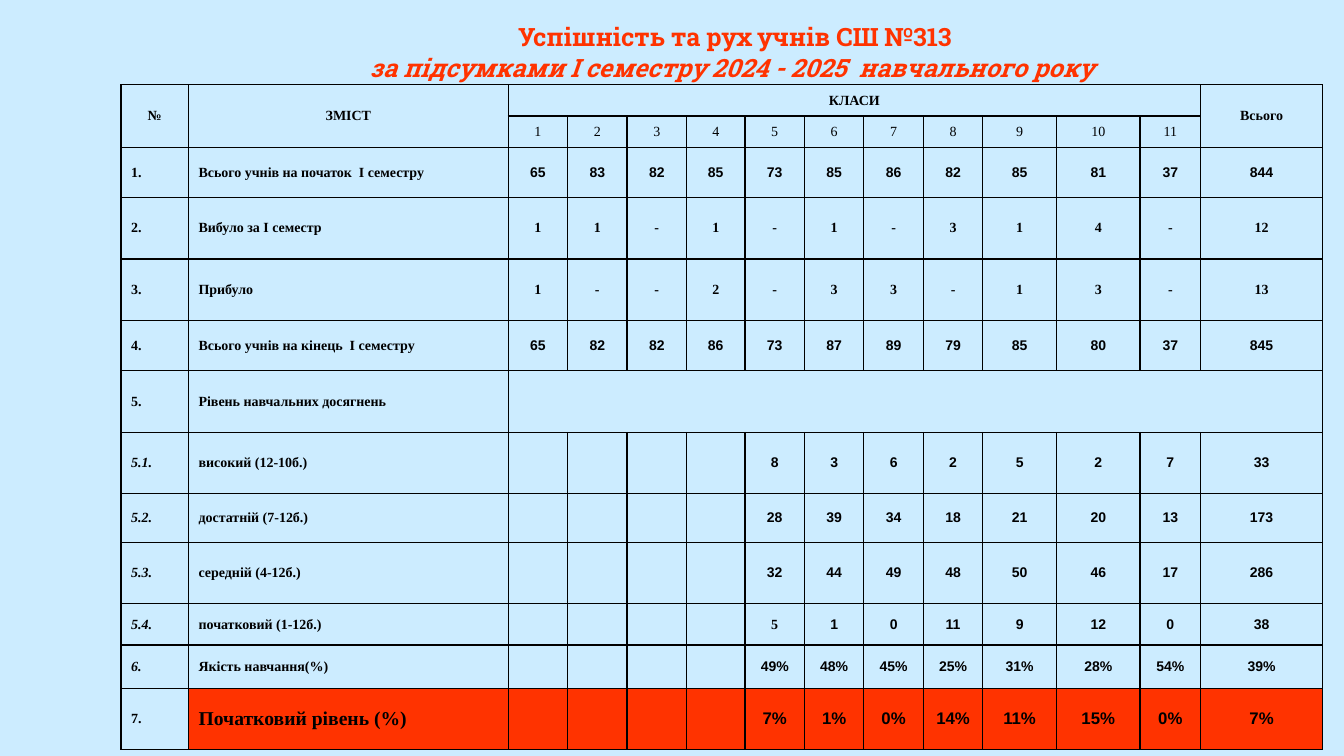
import pptx
import pptx.dml.color
import pptx.enum.text
import pptx.oxml
import pptx.oxml.ns
import pptx.util
from dataclasses import dataclass

ALIGN = pptx.enum.text.PP_ALIGN
MIDDLE = pptx.enum.text.MSO_ANCHOR.MIDDLE


@dataclass(frozen=True)
class Theme:
    background: str = "CCECFF"
    accent: str = "FF3300"
    ink: str = "000000"
    title_font: str = "Roboto Slab"
    label_font: str = "Times New Roman"
    number_font: str = "Arial"
    title_size: int = 18
    body_size: int = 10
    alert_label_size: int = 14
    alert_number_size: int = 12
    border_width: int = 1


THEME = Theme()
SLIDE_SIZE = (13.33, 7.5)
TITLE_AREA = (3.17, 0.16, 8.18, 1.01)
TABLE_CORNER = (1.2, 0.84)
COLUMN_WIDTHS = [0.67, 3.17] + [0.59] * 3 + [0.58] + [0.59] * 4 + [0.73, 0.83, 0.6, 1.21]
ROW_HEIGHTS = [0.31, 0.31, 0.5, 0.61, 0.61, 0.5, 0.61, 0.61, 0.48, 0.61, 0.41, 0.43, 0.61]
HEADER_ROWS = 2
FIRST_CLASS, TOTAL = 2, 13
LEVELS_ROW, BEGINNER_ROW, ALERT_ROW = 6, 10, 12
ITALIC_ROWS = range(7, 12)
SERIF_ROWS = (1, 3, 4)

# Number, label and the values, which end at the total column
RECORDS = [
    ("1.", "Всього учнів на початок  І семестру", "65 83 82 85 73 85 86 82 85 81 37 844"),
    ("2.", "Вибуло за І семестр", "1 1 - 1 - 1 - 3 1 4 - 12"),
    ("3.", "Прибуло", "1 - - 2 - 3 3 - 1 3 - 13"),
    ("4.", "Всього учнів на кінець  І семестру", "65 82 82 86 73 87 89 79 85 80 37 845"),
    ("5.", "Рівень навчальних досягнень", ""),
    ("5.1.", "високий (12-10б.)", "8 3 6 2 5 2 7 33"),
    ("5.2.", "достатній (7-12б.)", "28 39 34 18 21 20 13 173"),
    ("5.3.", "середній (4-12б.)", "32 44 49 48 50 46 17 286"),
    ("5.4.", "початковий (1-12б.)", "5 1 0 11 9 12 0 38"),
    ("6.", "Якість навчання(%)", "49% 48% 45% 25% 31% 28% 54% 39%"),
    ("7.", "Початковий рівень (%)", "7% 1% 0% 14% 11% 15% 0% 7%"),
]


def inches(*lengths):
    return [pptx.util.Inches(length) for length in lengths]


def rgb(code):
    return pptx.dml.color.RGBColor.from_string(code)


def write(para, text, *, font=THEME.label_font, size=THEME.body_size, color=THEME.ink,
          bold=True, italic=False, align=ALIGN.CENTER):
    para.alignment = align
    if not text:
        para._p.get_or_add_endParaRPr().set("sz", str(size * 100))
        return
    span = para.add_run()
    span.text = text
    span.font.name, span.font.size = font, pptx.util.Pt(size)
    span.font.bold, span.font.italic = bold, italic
    span.font.color.rgb = rgb(color)


def add_title(page):
    box = page.shapes.add_textbox(*inches(*TITLE_AREA))
    frame = box.text_frame
    frame.word_wrap = False
    frame.vertical_anchor = MIDDLE
    lines = [(" Успішність та рух учнів СШ №313", False),
             ("за підсумками І семестру 2024 - 2025  навчального року", True),
             ("", False)]
    for index, (text, italic) in enumerate(lines):
        para = frame.add_paragraph() if index else frame.paragraphs[0]
        write(para, text, font=THEME.title_font, size=THEME.title_size,
              color=THEME.accent, italic=italic)


def style_cell(cell, fill):
    cell.vertical_anchor = MIDDLE
    properties = cell._tc.get_or_add_tcPr()
    width = pptx.util.Pt(THEME.border_width)
    for side in ("lnL", "lnR", "lnT", "lnB"):
        properties.append(pptx.oxml.parse_xml(
            f'<a:{side} {pptx.oxml.ns.nsdecls("a")} w="{width}"><a:solidFill>'
            f'<a:srgbClr val="{THEME.ink}"/></a:solidFill></a:{side}>'))
    if fill:
        cell.fill.solid()
        cell.fill.fore_color.rgb = rgb(fill)
    else:
        cell.fill.background()


def table_rows():
    """Return every row as a full list of cell texts."""
    classes = [str(number) for number in range(1, 12)]
    rows = [["№", "ЗМІСТ", "КЛАСИ"] + [""] * 10 + ["Всього"], ["", ""] + classes + [""]]
    for number, label, numbers in RECORDS:
        values = numbers.split()
        gap = [""] * (TOTAL + 1 - FIRST_CLASS - len(values))
        rows.append([number, label] + gap + values)
    return rows


def cell_format(row, column):
    """Return the text format that belongs to a place in the table."""
    if row < HEADER_ROWS:
        return {"bold": row == 0}
    alert = row == ALERT_ROW
    if column < FIRST_CLASS:
        size = THEME.alert_label_size if alert and column == 1 else THEME.body_size
        return {"align": ALIGN.LEFT, "size": size,
                "italic": column == 0 and row in ITALIC_ROWS}
    serif = row in SERIF_ROWS or (row, column) == (BEGINNER_ROW, 6)
    return {"font": THEME.label_font if serif else THEME.number_font,
            "size": THEME.alert_number_size if alert else THEME.body_size}


def add_results_table(page):
    rows = table_rows()
    frame = page.shapes.add_table(
        len(ROW_HEIGHTS), len(COLUMN_WIDTHS),
        *inches(*TABLE_CORNER, sum(COLUMN_WIDTHS), sum(ROW_HEIGHTS)))
    table = frame.table
    table.first_row = table.horz_banding = False
    for column, width in zip(table.columns, inches(*COLUMN_WIDTHS)):
        column.width = width
    for row, height in zip(table.rows, inches(*ROW_HEIGHTS)):
        row.height = height
    # Cells
    for row, texts in enumerate(rows):
        for column, text in enumerate(texts):
            cell = table.cell(row, column)
            style_cell(cell, THEME.accent if row == ALERT_ROW and column else None)
            write(cell.text_frame.paragraphs[0], text, **cell_format(row, column))
    # Joined headings and the empty band of the levels row
    for column in (0, 1, TOTAL):
        table.cell(0, column).merge(table.cell(1, column))
    table.cell(0, FIRST_CLASS).merge(table.cell(0, TOTAL - 1))
    table.cell(LEVELS_ROW, FIRST_CLASS).merge(table.cell(LEVELS_ROW, TOTAL))


def main():
    deck = pptx.Presentation()
    deck.slide_width, deck.slide_height = inches(*SLIDE_SIZE)
    page = deck.slides.add_slide(deck.slide_layouts[6])
    page.background.fill.solid()
    page.background.fill.fore_color.rgb = rgb(THEME.background)
    add_title(page)
    add_results_table(page)
    deck.save("out.pptx")


if __name__ == "__main__":
    main()
